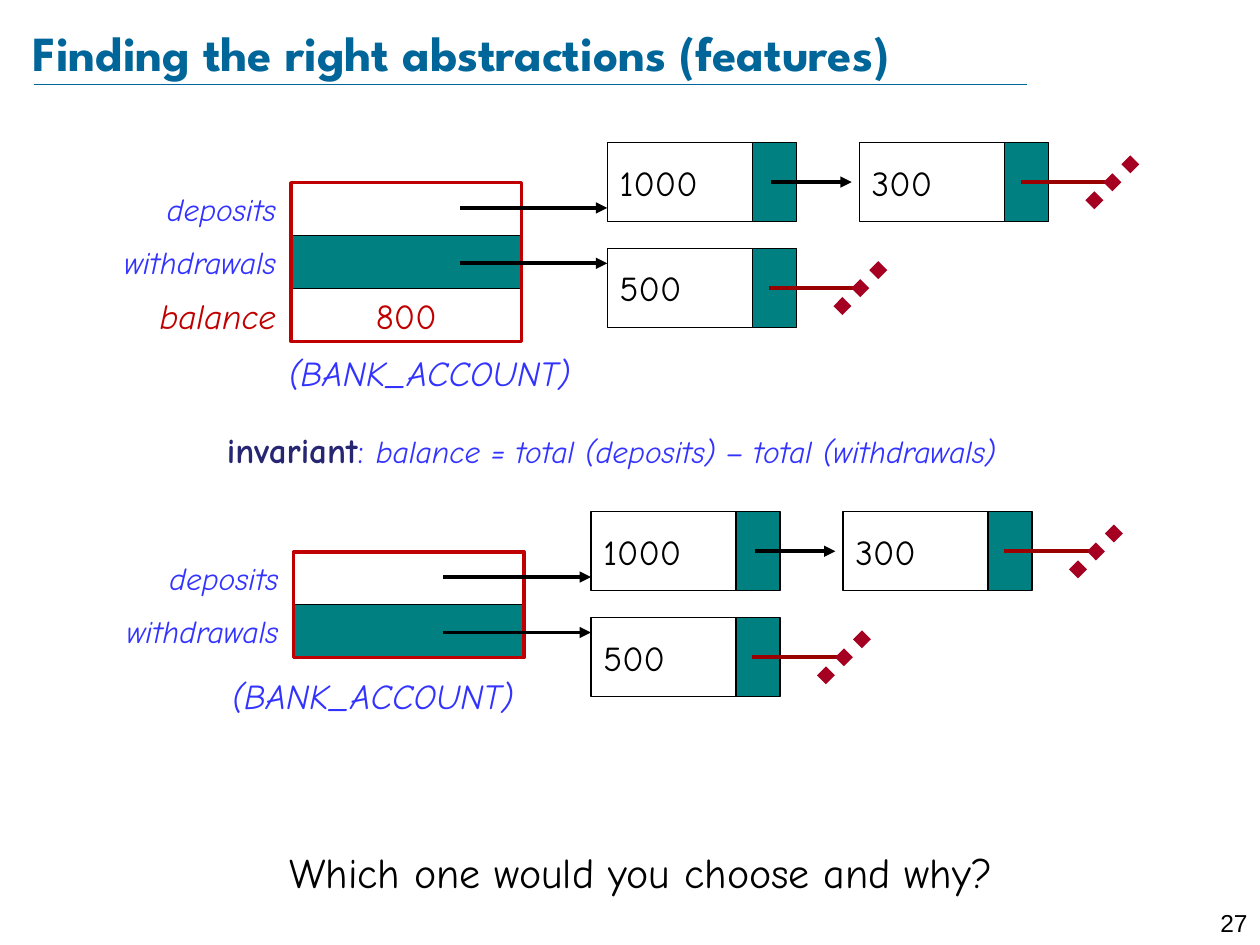
from dataclasses import dataclass

from lxml.etree import SubElement
from pptx import Presentation
from pptx.dml.color import RGBColor
from pptx.enum.dml import MSO_LINE
from pptx.enum.shapes import MSO_CONNECTOR, MSO_SHAPE
from pptx.enum.text import MSO_ANCHOR, MSO_AUTO_SIZE, PP_ALIGN
from pptx.oxml.ns import qn
from pptx.util import Inches, Pt


@dataclass(frozen=True)
class Theme:
    heading_font: str = "League Spartan"
    body_font: str = "Comic Neue"
    number_font: str = "Arial"
    heading: str = "006699"
    ink: str = "000000"
    paper: str = "FFFFFF"
    teal: str = "008080"
    red: str = "C00000"
    blue: str = "3333FF"
    navy: str = "262673"
    link: str = "990000"
    dots: str = "A50021"
    title_size: float = 28
    question_size: float = 24
    body_size: float = 20
    label_size: float = 18
    number_size: float = 14
    hairline: float = 0.25
    cell_line: float = 0.75
    frame_line: float = 2
    arrow_line: float = 2.15
    dots_line: float = 7.25


THEME = Theme()
ROW_WIDTH, ROW_HEIGHT = 1.83, 0.42
AMOUNT_WIDTH, LINK_WIDTH, NODE_HEIGHT = 1.15, 0.35, 0.63
NODE_PITCH, LIST_PITCH, POINTER_PITCH = 2, 0.84, 0.44


def format_run(run, size, color, font=THEME.body_font, bold=False, italic=False):
    run.font.name = font
    run.font.size = Pt(size)
    run.font.color.rgb = RGBColor.from_string(color)
    run.font.bold = bold
    run.font.italic = italic


def write(frame, text, size, color, align=PP_ALIGN.LEFT,
          anchor=MSO_ANCHOR.MIDDLE, **style):
    frame.text = text
    frame.word_wrap = True
    frame.vertical_anchor = anchor
    paragraph = frame.paragraphs[0]
    paragraph.alignment = align
    format_run(paragraph.runs[0], size, color, **style)


def add_label(slide, box, text, size, color, **style):
    label = slide.shapes.add_textbox(*map(Inches, box))
    write(label.text_frame, text, size, color, **style)


def add_cell(slide, box, fill, line=THEME.ink, width=THEME.cell_line):
    cell = slide.shapes.add_shape(MSO_SHAPE.RECTANGLE, *map(Inches, box))
    cell.shadow.inherit = False
    if fill:
        cell.fill.solid()
        cell.fill.fore_color.rgb = RGBColor.from_string(fill)
    else:
        cell.fill.background()
    cell.line.color.rgb = RGBColor.from_string(line)
    cell.line.width = Pt(width)
    return cell


def add_line(slide, start, end, color, width, arrow=False):
    line = slide.shapes.add_connector(
        MSO_CONNECTOR.STRAIGHT, *map(Inches, (*start, *end)))
    line.line.color.rgb = RGBColor.from_string(color)
    line.line.width = Pt(width)
    properties = line._element.spPr
    if arrow:
        SubElement(properties.find(qn("a:ln")), qn("a:tailEnd"), type="triangle")
    SubElement(properties, qn("a:effectLst"))
    return line


def add_heading(slide, left, top, width, height):
    title = slide.shapes.title
    title.left, title.top, title.width, title.height = map(
        Inches, (left, top, width, height))
    frame = title.text_frame
    write(frame, "Finding the right abstractions (features)", THEME.title_size,
          THEME.heading, font=THEME.heading_font, bold=True)
    frame.auto_size = MSO_AUTO_SIZE.NONE
    frame.margin_left = frame.margin_right = 0
    frame.margin_top = frame.margin_bottom = 0
    add_line(slide, (left + 0.01, top + 0.65), (left + 7.89, top + 0.65),
             THEME.heading, THEME.hairline)


def add_account(slide, left, top, caption_left, caption_gap, balance=None):
    fields = [("deposits", THEME.paper, THEME.label_size, THEME.blue),
              ("withdrawals", THEME.teal, THEME.label_size, THEME.blue)]
    if balance:
        fields.append(("balance", THEME.paper, THEME.body_size, THEME.red))
    for index, (field, fill, size, color) in enumerate(fields):
        row_top = top + index * ROW_HEIGHT
        row = add_cell(slide, (left, row_top, ROW_WIDTH, ROW_HEIGHT), fill)
        if field == "balance":
            write(row.text_frame, balance, size, color, align=PP_ALIGN.CENTER)
        add_label(slide, (left - 1.98, row_top, 1.96, ROW_HEIGHT), field, size,
                  color, align=PP_ALIGN.RIGHT, italic=True)
    height = len(fields) * ROW_HEIGHT
    add_cell(slide, (left, top, ROW_WIDTH, height), None,
             THEME.red, THEME.frame_line)
    add_label(slide, (caption_left, top + height + caption_gap, 3.34, 0.44),
              "(BANK_ACCOUNT)", THEME.body_size, THEME.blue,
              align=PP_ALIGN.CENTER, italic=True)


def add_chain(slide, left, top, amounts):
    middle = top + NODE_HEIGHT / 2
    for index, amount in enumerate(amounts):
        node = left + index * NODE_PITCH
        cell = add_cell(slide, (node, top, AMOUNT_WIDTH, NODE_HEIGHT), THEME.paper)
        write(cell.text_frame, amount, THEME.body_size, THEME.ink)
        add_cell(slide, (node + AMOUNT_WIDTH, top, LINK_WIDTH, NODE_HEIGHT),
                 THEME.teal)
        if index < len(amounts) - 1:
            add_line(slide, (node + 1.3, middle), (node + 1.94, middle),
                     THEME.ink, THEME.arrow_line, arrow=True)
    add_line(slide, (node + 1.28, middle), (node + 1.97, middle),
             THEME.link, THEME.frame_line)
    dots = add_line(slide, (node + 1.83, middle + 0.18),
                    (node + 2.19, middle - 0.18), THEME.dots, THEME.dots_line)
    dots.line.dash_style = MSO_LINE.ROUND_DOT


def add_movements(slide, left, top):
    for index, amounts in enumerate([("1000", "300"), ("500",)]):
        add_chain(slide, left, top + index * LIST_PITCH, amounts)
        pointer = top + 0.52 + index * POINTER_PITCH
        add_line(slide, (left - 1.17, pointer), (left, pointer),
                 THEME.ink, THEME.arrow_line, arrow=True)


def add_invariant(slide, left, top, width, height):
    invariant = slide.shapes.add_textbox(*map(Inches, (left, top, width, height)))
    frame = invariant.text_frame
    write(frame, "invariant", THEME.body_size, THEME.navy,
          align=PP_ALIGN.CENTER, anchor=MSO_ANCHOR.TOP, bold=True)
    for text, size, italic in (
            (": ", THEME.body_size, False),
            ("balance = total (deposits) – total (withdrawals)",
             THEME.label_size, True)):
        run = frame.paragraphs[0].add_run()
        run.text = text
        format_run(run, size, THEME.blue, italic=italic)


def main():
    presentation = Presentation()
    presentation.slide_width = Inches(10)
    presentation.slide_height = Inches(7.5)
    slide = presentation.slides.add_slide(presentation.slide_layouts[5])

    add_heading(slide, 0.26, 0.02, 7.58, 0.79)
    add_account(slide, 2.31, 1.45, 1.74, 0.03, balance="800")
    add_movements(slide, 4.82, 1.13)
    add_invariant(slide, 0.25, 3.35, 9.21, 0.54)
    add_account(slide, 2.33, 4.38, 1.29, 0.08)
    add_movements(slide, 4.69, 4.06)
    add_label(slide, (0.48, 6.65, 9.21, 0.54),
              "Which one would you choose and why?", THEME.question_size,
              THEME.ink, align=PP_ALIGN.CENTER)
    add_label(slide, (9.45, 7.16, 0.55, 0.24), "27", THEME.number_size, THEME.ink,
              align=PP_ALIGN.RIGHT, anchor=MSO_ANCHOR.TOP, font=THEME.number_font)
    presentation.save("out.pptx")


if __name__ == "__main__":
    main()
